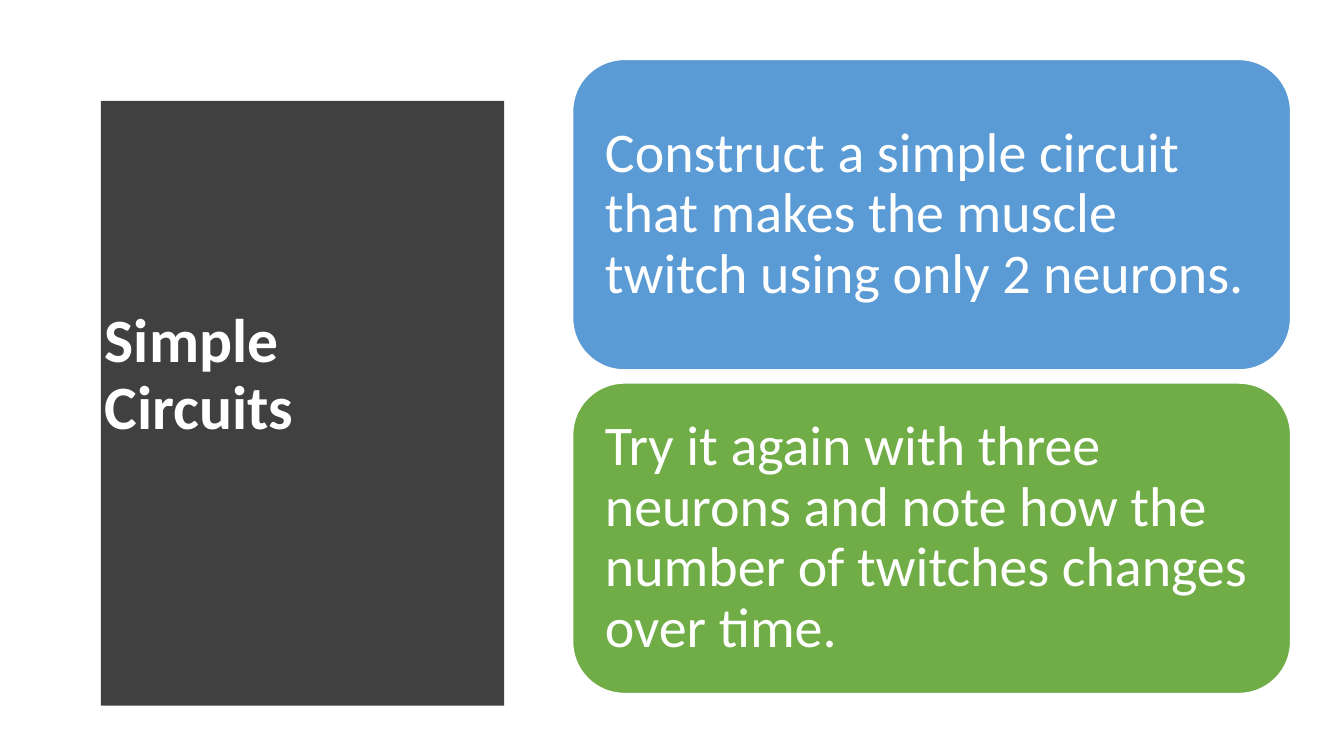
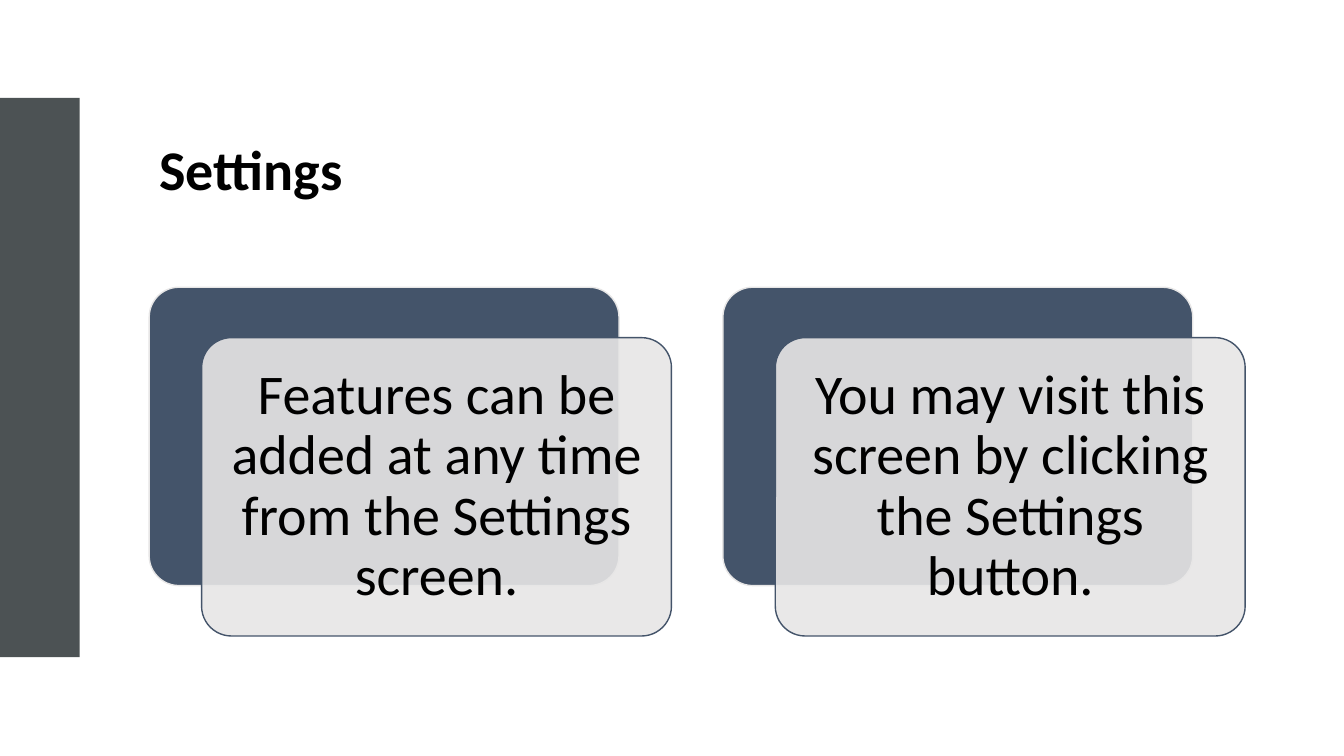
from pptx import Presentation
from pptx.dml.color import RGBColor
from pptx.enum import shapes as kinds, text as txt
from pptx.oxml.ns import qn
from pptx.util import Inches, Pt
from lxml import etree

INK = {
    "white": "FFFFFF", "black": "000000", "panel": "404040", "band": "4C5254",
    "blue": "5B9BD5", "green": "70AD47", "navy": "44546A", "pale": "E7E6E6",
}
FONT = "Calibri"
LEFT, MID = txt.PP_ALIGN.LEFT, txt.PP_ALIGN.CENTER
ROUND, RECT = kinds.MSO_SHAPE.ROUNDED_RECTANGLE, kinds.MSO_SHAPE.RECTANGLE


def write(shape, words, size, color, bold=False, align=LEFT, inset=0.17):
    """Fill a shape or placeholder with one vertically centred paragraph."""
    frame = shape.text_frame
    frame.word_wrap = True
    frame.auto_size = txt.MSO_AUTO_SIZE.NONE
    frame.vertical_anchor = txt.MSO_ANCHOR.MIDDLE
    frame.margin_left = frame.margin_right = Inches(inset)
    frame.margin_top = frame.margin_bottom = Inches(min(inset, 0.17) if inset > 0.1 else 0.05)
    frame.text = words
    para = frame.paragraphs[0]
    para.alignment = align
    para.line_spacing = 0.9
    look = {"name": FONT, "size": Pt(size), "bold": bold}
    for key, value in look.items():
        setattr(para.font, key, value)
    para.font.color.rgb = RGBColor.from_string(INK[color])


def paint(shape, fill, line=None):
    shape.shadow.inherit = False
    shape.fill.solid()
    shape.fill.fore_color.rgb = RGBColor.from_string(INK[fill])
    if line:
        shape.line.color.rgb = RGBColor.from_string(INK[line])
        shape.line.width = Pt(1)
    else:
        shape.line.fill.background()


deck = Presentation()
deck.slide_width, deck.slide_height = Inches(13.33), Inches(7.5)

# Titles of both slides
titles = [
    ("Simple Circuits", 44, "white", (0.94, 1.11, 3.74, 5.24)),
    ("Settings", 40, "black", (1.48, 0.97, 10.88, 1.47)),
]
pages = []
for words, size, color, box in titles:
    page = deck.slides.add_slide(deck.slide_layouts[5])
    head = page.shapes.title
    head.left, head.top, head.width, head.height = map(Inches, box)
    write(head, words, size, color, bold=True, inset=0.1)
    pages.append(page)
first, second = pages

# Slide 1: dark panel with a bulging right edge, behind the title
left, top, base, edge, bulge = 0.53, 0.52, 6.96, 5.08, 0.24
steps = 40
curve = []
for i in range(steps + 1):
    t = i / steps
    curve.append((edge + bulge * (1 - (2 * t - 1) ** 2), top + t * (base - top)))
path = first.shapes.build_freeform(left, top, scale=Inches(1))
path.add_line_segments(curve + [(left, base)], close=True)
panel = path.convert_to_shape()
paint(panel, "panel")
first.shapes.title._element.addprevious(panel._element)

# Slide 1: two stacked cards
tasks = [
    ("Construct a simple circuit that makes the muscle twitch using only 2 neurons.", "blue"),
    ("Try it again with three neurons and note how the number of twitches changes over time.",
     "green"),
]
for i, (words, fill) in enumerate(tasks):
    card = first.shapes.add_shape(
        ROUND, Inches(5.68), Inches(0.59 + 3.21 * i), Inches(7.12), Inches(3.08))
    paint(card, fill, "white")
    write(card, words, 40, "white")

# Slide 2: band at the left edge
band = second.shapes.add_shape(RECT, 0, Inches(0.97), Inches(0.79), Inches(5.55))
paint(band, "band")

# Slide 2: two notes, each a pale card over a navy one
notes = [
    "Features can be added at any time from the Settings screen.",
    "You may visit this screen by clicking the Settings button.",
]
for i, words in enumerate(notes):
    x = 1.48 + 5.69 * i
    layers = [(x, 2.85, "navy", "pale"), (x + 0.52, 3.35, "pale", "navy")]
    for across, down, fill, line in layers:
        card = second.shapes.add_shape(
            ROUND, Inches(across), Inches(down), Inches(4.66), Inches(2.96))
        card.adjustments[0] = 0.1
        paint(card, fill, line)
    tint = card._element.spPr.find(qn("a:solidFill")).find(qn("a:srgbClr"))
    etree.SubElement(tint, qn("a:alpha")).set("val", "90000")
    write(card, words, 40, "black", align=MID)

deck.save("out.pptx")
